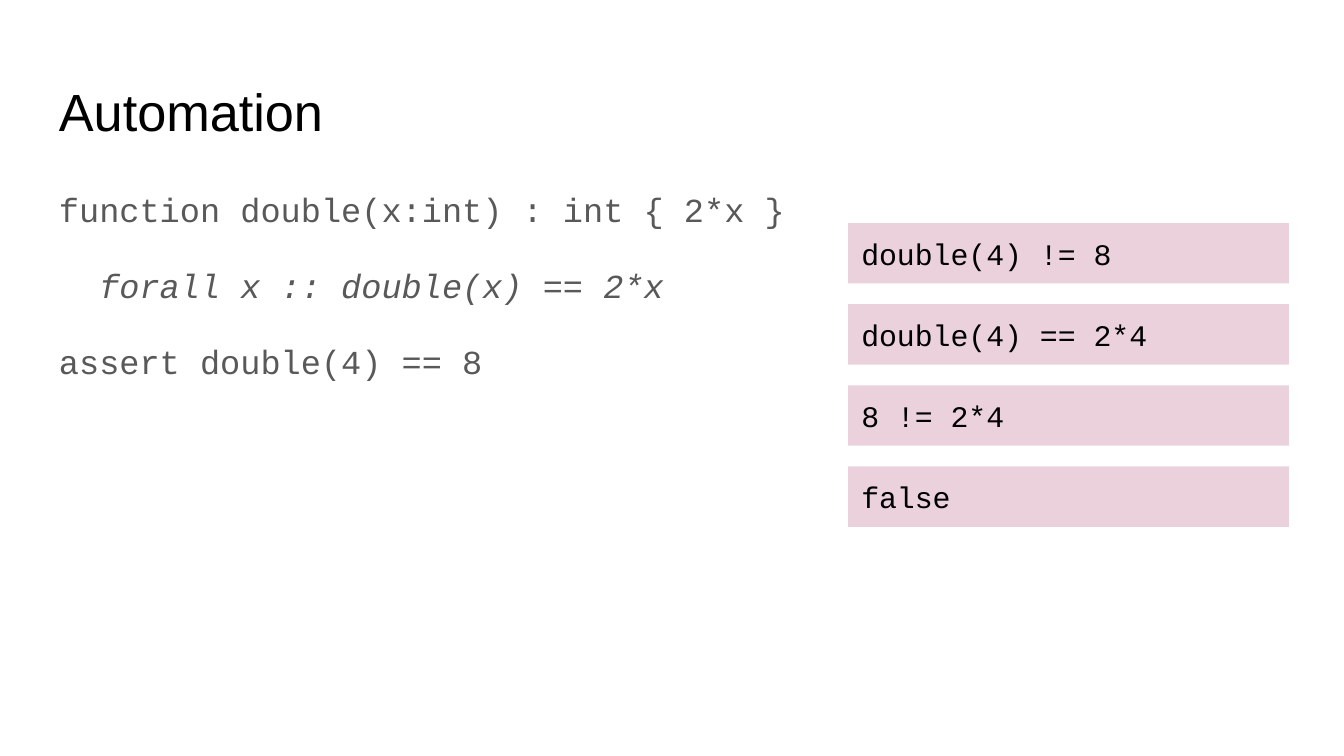
from pptx import Presentation
from pptx.dml.color import RGBColor
from pptx.enum.shapes import MSO_SHAPE as Shape
from pptx.enum.text import MSO_ANCHOR as Anchor, PP_ALIGN as Align
from pptx.util import Inches, Pt

COLORS = {"title": "000000", "code": "595959", "step": "000000", "step_fill": "EAD1DC"}

TITLE = "Automation"
CODE_LINES = [
    ("function double(x:int) : int { 2*x }", {}),
    ("forall x :: double(x) == 2*x", {"italic": True, "indent": 0.3}),
    ("assert double(4) == 8", {}),
]
PROOF_STEPS = ["double(4) != 8", "double(4) == 2*4", "8 != 2*4", "false"]

TITLE_FONT = {"name": "Arial", "size": Pt(28)}
CODE_FONT = {"name": "Courier New", "size": Pt(18)}
STEP_FONT = {"name": "Courier New", "size": Pt(16)}

SLIDE_WIDTH = 10
SLIDE_HEIGHT = SLIDE_WIDTH * 9 / 16
LEFT, WIDTH = 0.34, 9.32
STEP_LEFT, STEP_WIDTH, STEP_HEIGHT = 6.31, 3.28, 0.45
FIRST_STEP_TOP, LAST_STEP_TOP = 1.66, 3.47
STEP_PITCH = (LAST_STEP_TOP - FIRST_STEP_TOP) / (len(PROOF_STEPS) - 1)


def set_frame(frame, anchor):
    margins = dict.fromkeys(
        ("margin_left", "margin_top", "margin_right", "margin_bottom"), Inches(0.1))
    for key, value in {**margins, "word_wrap": True, "vertical_anchor": anchor}.items():
        setattr(frame, key, value)


def write(paragraph, text, font, color):
    paragraph.alignment = Align.LEFT
    run = paragraph.add_run()
    run.text = text
    for key, value in font.items():
        setattr(run.font, key, value)
    run.font.color.rgb = RGBColor.from_string(COLORS[color])


def add_text_frame(slide, top, height):
    box = slide.shapes.add_textbox(*map(Inches, (LEFT, top, WIDTH, height)))
    set_frame(box.text_frame, Anchor.TOP)
    return box.text_frame


def add_code(slide):
    frame = add_text_frame(slide, 1.26, 3.74)
    for i, (text, style) in enumerate(CODE_LINES):
        line = frame.add_paragraph() if i else frame.paragraphs[0]
        line.line_spacing = 1.15
        line.space_before = Pt(16 if i else 0)
        if "indent" in style:
            line._p.get_or_add_pPr().set("marL", str(Inches(style["indent"])))
        write(line, text, {**CODE_FONT, "italic": style.get("italic", False)}, "code")
    line.space_after = Pt(16)


def add_step(slide, index, text):
    top = FIRST_STEP_TOP + index * STEP_PITCH
    step = slide.shapes.add_shape(
        Shape.RECTANGLE, *map(Inches, (STEP_LEFT, top, STEP_WIDTH, STEP_HEIGHT)))
    step.shadow.inherit = False
    step.fill.solid()
    step.fill.fore_color.rgb = RGBColor.from_string(COLORS["step_fill"])
    step.line.fill.background()
    set_frame(step.text_frame, Anchor.MIDDLE)
    write(step.text_frame.paragraphs[0], text, STEP_FONT, "step")


def main():
    deck = Presentation()
    deck.slide_width, deck.slide_height = Inches(SLIDE_WIDTH), Inches(SLIDE_HEIGHT)
    slide = deck.slides.add_slide(deck.slide_layouts[6])

    title = add_text_frame(slide, 0.49, 0.63)
    write(title.paragraphs[0], TITLE, TITLE_FONT, "title")
    add_code(slide)
    for index, text in enumerate(PROOF_STEPS):
        add_step(slide, index, text)

    deck.save("out.pptx")


if __name__ == "__main__":
    main()
